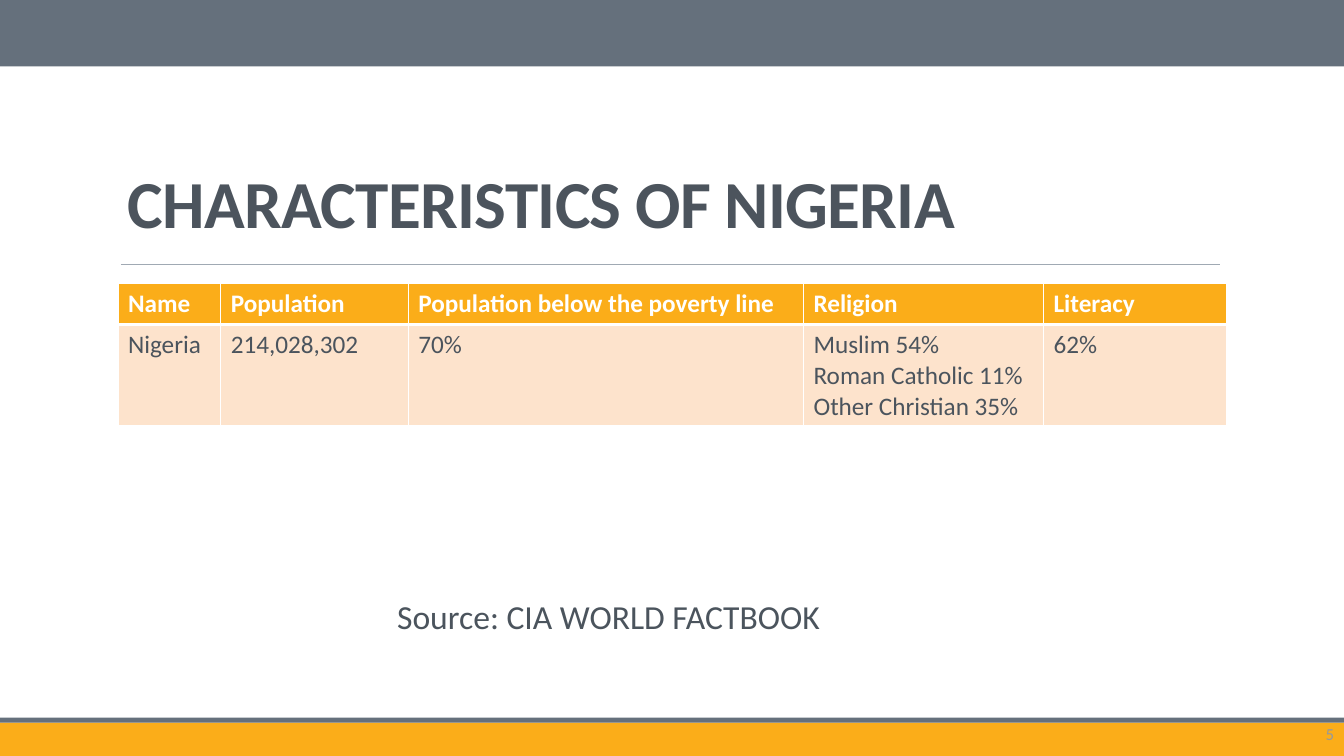
from dataclasses import dataclass

import lxml.etree
import pptx
import pptx.dml.color
import pptx.enum.shapes
import pptx.enum.text
import pptx.oxml.ns
import pptx.util

Inches = pptx.util.Inches
Pt = pptx.util.Pt
qn = pptx.oxml.ns.qn
ALIGN = pptx.enum.text.PP_ALIGN
ANCHOR = pptx.enum.text.MSO_ANCHOR


@dataclass(frozen=True)
class Theme:
    font: str = "Calibri"
    title: str = "4C545D"
    text: str = "4B545D"
    slate: str = "65707C"
    gold: str = "FBAD19"
    peach: str = "FDE3CC"
    rule: str = "A0A9B3"
    number: str = "96999C"
    white: str = "FFFFFF"
    title_size: int = 48
    source_size: int = 24
    table_size: int = 18
    number_size: int = 12


def rgb(color):
    return pptx.dml.color.RGBColor.from_string(color)


class SlideBuilder:
    def __init__(self, s, theme):
        self.s = s
        self.theme = theme

    def style(self, p, size, color, bold=False):
        p.font.name = self.theme.font
        p.font.size = Pt(size)
        p.font.bold = bold
        p.font.color.rgb = rgb(color)

    def bar(self, top, height, color):
        sp = self.s.shapes.add_shape(
            pptx.enum.shapes.MSO_SHAPE.RECTANGLE,
            0, Inches(top), Inches(13.33), Inches(height))
        sp.shadow.inherit = False
        sp.fill.solid()
        sp.fill.fore_color.rgb = rgb(color)
        sp.line.fill.background()

    def rule(self, left, right, y):
        line = self.s.shapes.add_connector(
            pptx.enum.shapes.MSO_CONNECTOR.STRAIGHT,
            Inches(left), Inches(y), Inches(right), Inches(y))
        line.line.color.rgb = rgb(self.theme.rule)
        line.line.width = Pt(0.5)
        lxml.etree.SubElement(line._element.spPr, qn("a:effectLst"))

    def text(self, box, text, size, color, bold=False,
             anchor=ANCHOR.TOP, align=ALIGN.LEFT):
        sp = self.s.shapes.add_textbox(*map(Inches, box))
        tf = sp.text_frame
        tf.word_wrap = True
        tf.vertical_anchor = anchor
        p = tf.paragraphs[0]
        p.text = text
        p.alignment = align
        self.style(p, size, color, bold)
        return p

    def title(self, box, text):
        p = self.text(box, text, self.theme.title_size, self.theme.title,
                      bold=True, anchor=ANCHOR.BOTTOM)
        p.line_spacing = 0.85
        p.runs[0]._r.get_or_add_rPr().set("spc", "-50")

    def borders(self, cell, widths):
        tc_pr = cell._tc.get_or_add_tcPr()
        for side, width in widths.items():
            ln = lxml.etree.SubElement(tc_pr, qn(f"a:ln{side}"), w=str(Pt(width)))
            fill = lxml.etree.SubElement(ln, qn("a:solidFill"))
            lxml.etree.SubElement(fill, qn("a:srgbClr"), val=self.theme.white)

    def table(self, left, top, widths, heights, rows):
        t = self.theme
        table = self.s.shapes.add_table(
            len(rows), len(widths), Inches(left), Inches(top),
            Inches(sum(widths)), Inches(sum(heights))).table
        table.horz_banding = False
        for column, width in zip(table.columns, widths):
            column.width = Inches(width)
        for i, (row, height) in enumerate(zip(rows, heights)):
            header = i == 0
            table.rows[i].height = Inches(height)
            for j, text in enumerate(row):
                cell = table.cell(i, j)
                cell.text = text
                self.borders(cell, {"L": 1, "R": 1, "T": 1 if header else 3,
                                    "B": 3 if header else 1})
                cell.fill.solid()
                cell.fill.fore_color.rgb = rgb(t.gold if header else t.peach)
                for p in cell.text_frame.paragraphs:
                    self.style(p, t.table_size, t.white if header else t.text, header)


def main():
    prs = pptx.Presentation()
    prs.slide_width = Inches(13.33)
    prs.slide_height = Inches(7.5)
    theme = Theme()
    slide = SlideBuilder(prs.slides.add_slide(prs.slide_layouts[6]), theme)

    slide.bar(7.17, 0.33, theme.gold)
    slide.bar(7.12, 0.05, theme.slate)
    slide.rule(1.2, 12.1, 2.62)
    slide.bar(0, 0.66, theme.slate)
    slide.title((1.17, 0.86, 11, 1.59), "CHARACTERISTICS OF NIGERIA")
    slide.table(
        1.17, 2.81, [1.02, 1.86, 3.92, 2.38, 1.82], [0.41, 1],
        [["Name", "Population", "Population below the poverty line",
          "Religion", "Literacy"],
         ["Nigeria", "214,028,302", "70%",
          "Muslim 54%\nRoman Catholic 11%\nOther Christian 35%", "62%"]])
    slide.text((11.9, 7.08, 1.43, 0.4), "5", theme.number_size, theme.number,
               anchor=ANCHOR.MIDDLE, align=ALIGN.RIGHT)
    slide.text((3.84, 5.86, 6.47, 0.5), "Source: CIA WORLD FACTBOOK",
               theme.source_size, theme.text)

    prs.save("out.pptx")


if __name__ == "__main__":
    main()
